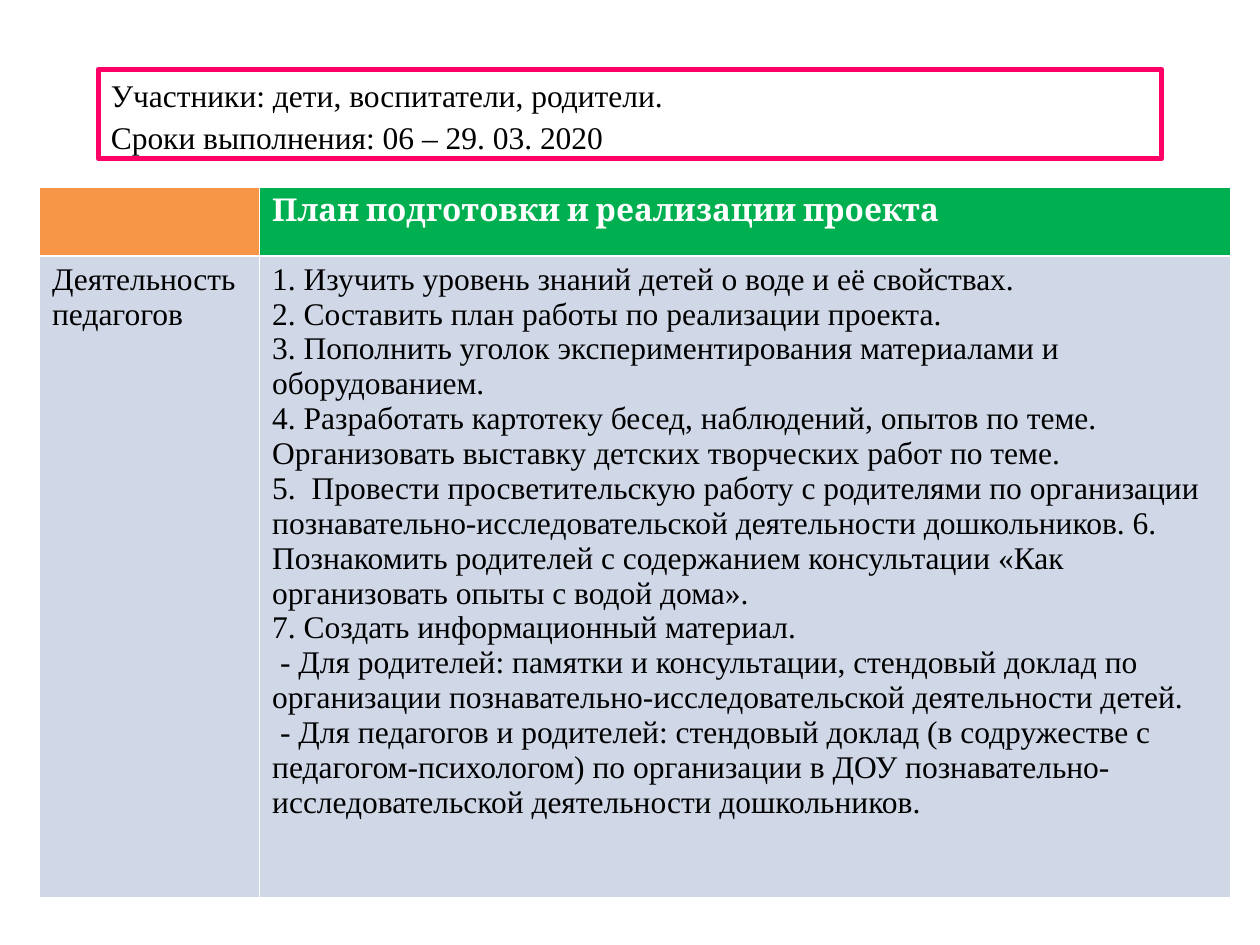
from dataclasses import dataclass

from pptx import Presentation
from pptx.dml.color import RGBColor
from pptx.enum.shapes import MSO_SHAPE
from pptx.enum.text import MSO_ANCHOR, PP_ALIGN
from pptx.util import Pt

RECTANGLE = MSO_SHAPE.RECTANGLE
MIDDLE = MSO_ANCHOR.MIDDLE
LEFT = PP_ALIGN.LEFT


@dataclass(frozen=True)
class Theme:
    text = RGBColor.from_string("000000")
    white = RGBColor.from_string("FFFFFF")
    frame = RGBColor.from_string("FF0066")
    corner = RGBColor.from_string("F79646")
    header = RGBColor.from_string("00B050")
    body = RGBColor.from_string("D0D8E8")
    size = Pt(18)
    body_font = "Times New Roman"
    header_font = "Cambria"


theme = Theme()
BODY_FORMAT = {"name": theme.body_font, "size": theme.size, "bold": False}
HEADER_FORMAT = {"name": theme.header_font, "size": theme.size, "bold": True}


def write_paragraphs(frame, lines, font_format, color, line_spacing=None):
    for index, line in enumerate(lines):
        paragraph = frame.paragraphs[0] if index == 0 else frame.add_paragraph()
        paragraph.alignment = LEFT
        paragraph.line_spacing = line_spacing
        run = paragraph.add_run()
        run.text = line
        for attribute, value in font_format.items():
            setattr(run.font, attribute, value)
        run.font.color.rgb = color


presentation = Presentation()
presentation.slide_width, presentation.slide_height = Pt(720), Pt(540)
slide = presentation.slides.add_slide(presentation.slide_layouts[6])

# Participants and dates
summary = slide.shapes.add_shape(RECTANGLE, Pt(56.2), Pt(39.6), Pt(607.6), Pt(51.1))
summary.shadow.inherit = False
summary.fill.background()
summary.line.color.rgb = theme.frame
summary.line.width = Pt(3)
summary.text_frame.word_wrap = True
summary.text_frame.vertical_anchor = MIDDLE
write_paragraphs(
    summary.text_frame,
    ["Участники: дети, воспитатели, родители.", "Сроки выполнения: 06 – 29. 03. 2020"],
    BODY_FORMAT,
    theme.text,
    line_spacing=1.1,
)

# Project plan
column_widths = [Pt(125.8), Pt(554.8)]
row_heights = [Pt(39.4), Pt(366.6)]
plan = slide.shapes.add_table(
    2, 2, Pt(22.6), Pt(106.8), sum(column_widths), sum(row_heights)
).table
for column, width in zip(plan.columns, column_widths):
    column.width = width
for row, height in zip(plan.rows, row_heights):
    row.height = height

teacher_tasks = [
    "1. Изучить уровень знаний детей о воде и её свойствах.",
    "2. Составить план работы по реализации проекта.",
    "3. Пополнить уголок экспериментирования материалами и оборудованием.",
    "4. Разработать картотеку бесед, наблюдений, опытов по теме.",
    "Организовать выставку детских творческих работ по теме.",
    "5.  Провести просветительскую работу с родителями по организации "
    "познавательно-исследовательской деятельности дошкольников. "
    "6. Познакомить родителей с содержанием консультации "
    "«Как организовать опыты с водой дома».",
    "7. Создать информационный материал.",
    " - Для родителей: памятки и консультации, стендовый доклад по "
    "организации познавательно-исследовательской деятельности детей.",
    " - Для педагогов и родителей: стендовый доклад (в содружестве с "
    "педагогом-психологом) по организации в ДОУ "
    "познавательно-исследовательской деятельности дошкольников.",
]
plan_cells = [
    (0, 0, [], theme.corner, HEADER_FORMAT, theme.white),
    (0, 1, ["План подготовки и реализации проекта"], theme.header, HEADER_FORMAT, theme.white),
    (1, 0, ["Деятельность педагогов"], theme.body, BODY_FORMAT, theme.text),
    (1, 1, teacher_tasks, theme.body, BODY_FORMAT, theme.text),
]
for row, column, lines, fill, font_format, color in plan_cells:
    cell = plan.cell(row, column)
    cell.fill.solid()
    cell.fill.fore_color.rgb = fill
    write_paragraphs(cell.text_frame, lines, font_format, color)

presentation.save("out.pptx")
